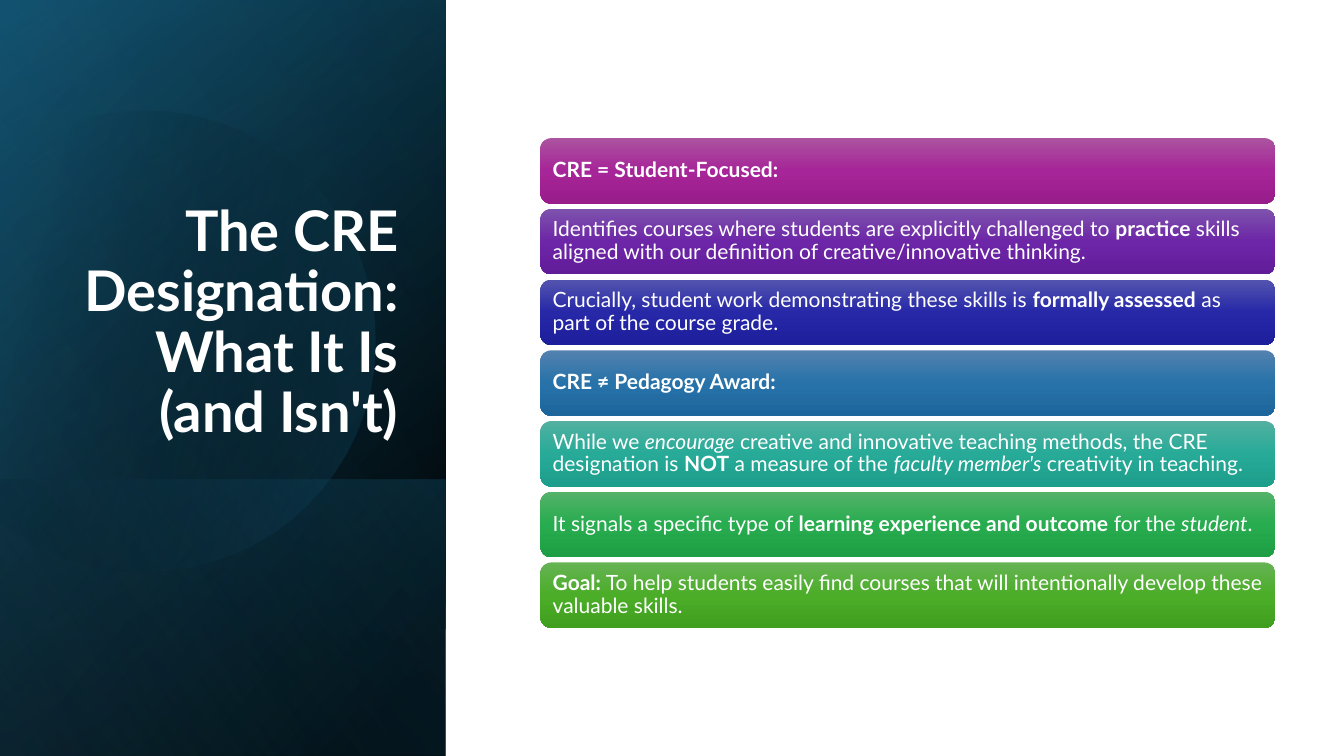
from dataclasses import dataclass
from math import cos, radians, sin

from lxml import etree
from pptx import Presentation
from pptx.dml.color import RGBColor
from pptx.enum.shapes import MSO_SHAPE
from pptx.enum.text import MSO_ANCHOR, PP_ALIGN
from pptx.oxml.ns import qn
from pptx.util import Inches, Pt

RECT, ROUND = MSO_SHAPE.RECTANGLE, MSO_SHAPE.ROUNDED_RECTANGLE
LEFT, RIGHT = PP_ALIGN.LEFT, PP_ALIGN.RIGHT
MIDDLE, BOTTOM = MSO_ANCHOR.MIDDLE, MSO_ANCHOR.BOTTOM
BOLD, ITALIC = {"bold": True}, {"italic": True}


@dataclass(frozen=True)
class Theme:
    font: str = "Lato"
    title: int = 40
    body: int = 15
    white: str = "FFFFFF"
    black: str = "000000"
    navy: str = "104862"
    teal: str = "156082"
    sky: str = "46B1E1"
    bars: tuple = (
        ("AC53A0", "A62598", "991C8B"),
        ("7E53AD", "6D26A7", "611C9A"),
        ("5354AE", "2628A8", "1D1E9B"),
        ("5382AF", "2772A9", "1D669C"),
        ("53B0A1", "27AB98", "1D9D8B"),
        ("54B269", "27AC4F", "1E9E44"),
        ("66B354", "4BAD28", "409F1E"),
    )


THEME = Theme()

TITLE = [("The CRE Designation: What It Is (and Isn't)", BOLD)]
ROWS = [
    [("CRE = Student-Focused:", BOLD)],
    [("Identifies courses where students are explicitly challenged to ", {}),
     ("practice", BOLD),
     (" skills aligned with our definition of creative/innovative thinking.", {})],
    [("Crucially, student work demonstrating these skills is ", {}),
     ("formally assessed", BOLD),
     (" as part of the course grade.", {})],
    [("CRE ≠ Pedagogy Award:", BOLD)],
    [("While we ", {}),
     ("encourage", ITALIC),
     (" creative and innovative teaching methods, the CRE designation is ", {}),
     ("NOT", BOLD),
     (" a measure of the ", {}),
     ("faculty member's", ITALIC),
     (" creativity in teaching.", {})],
    [("It signals a specific type of ", {}),
     ("learning experience and outcome", BOLD),
     (" for the ", {}),
     ("student", ITALIC),
     (".", {})],
    [("Goal:", BOLD),
     (" To help students easily find courses that will intentionally develop"
      " these valuable skills.", {})],
]

# Outline of the clipped disc: start point, then cubic (6) or line (2) segments
START = (1.49, 1.1)
DISC = [
    (2.46, 1.12, 3.35, 1.77, 3.63, 2.75),
    (3.98, 3.97, 3.28, 5.23, 2.07, 5.58),
    (1.31, 5.8, 0.53, 5.61, -0.03, 5.14),
    (-0.15, 5.03),
    (-0.15, 1.75),
    (0, 1.61),
    (0.23, 1.42, 0.5, 1.28, 0.8, 1.19),
    (1.03, 1.13, 1.26, 1.1, 1.49, 1.1),
]
HUB, TILT = (1.58, 3.34), -16.1


def trace(start, parts, steps=16):
    """Flatten line and cubic segments into a list of points."""
    dots = [start]
    for part in parts:
        if len(part) == 2:
            dots.append(part)
            continue
        ends = [dots[-1], part[:2], part[2:4], part[4:]]
        for step in range(1, steps + 1):
            t = step / steps
            u = 1 - t
            mix = (u ** 3, 3 * u * u * t, 3 * u * t * t, t ** 3)
            dots.append(tuple(sum(m * e[axis] for m, e in zip(mix, ends))
                              for axis in (0, 1)))
    return dots


def turn(dot, hub, angle):
    """Rotate a point clockwise about a hub, in degrees."""
    a, x, y = radians(angle), dot[0] - hub[0], dot[1] - hub[1]
    return hub[0] + x * cos(a) - y * sin(a), hub[1] + x * sin(a) + y * cos(a)


def add_run(para, text, size, color, bold=False, italic=False):
    run = para.add_run()
    run.text = text
    font = run.font
    font.name, font.size = THEME.font, Pt(size)
    font.bold, font.italic = bold, italic
    font.color.rgb = RGBColor.from_string(color)


class Deck:
    def __init__(self, theme):
        self.theme = theme
        self.show = Presentation()
        self.show.slide_width = Inches(13.33)
        self.show.slide_height = Inches(7.5)
        self.slide = self.show.slides.add_slide(self.show.slide_layouts[6])

    def paint(self, shape, stops, angle):
        """Fill with (position, colour[, opacity]) stops, all in percent."""
        shape.shadow.inherit = False
        shape.line.fill.background()
        shape.fill.gradient()
        grad = shape._element.spPr.find(qn("a:gradFill"))
        for child in list(grad):
            grad.remove(child)
        group = etree.SubElement(grad, qn("a:gsLst"))
        for pos, color, *alpha in stops:
            stop = etree.SubElement(group, qn("a:gs"), pos=str(pos * 1000))
            tint = etree.SubElement(stop, qn("a:srgbClr"), val=color)
            for level in alpha:
                etree.SubElement(tint, qn("a:alpha"), val=str(level * 1000))
        etree.SubElement(grad, qn("a:lin"), ang=str(angle * 60000), scaled="0")

    def panel(self, box, stops, angle):
        """Add a mirrored rectangle turned a quarter; box is before the turn."""
        shape = self.slide.shapes.add_shape(RECT, *map(Inches, box))
        shape.rotation = 90
        shape._element.spPr.xfrm.set("flipH", "1")
        self.paint(shape, stops, angle)

    def disc(self, stops, angle):
        dots = [tuple(map(Inches, turn(dot, HUB, -TILT)))
                for dot in trace(START, DISC)]
        pen = self.slide.shapes.build_freeform(*dots[0])
        pen.add_line_segments(dots[1:], close=True)
        shape = pen.convert_to_shape()
        shape.rotation = TILT
        self.paint(shape, stops, angle)

    def label(self, shape, runs, size, align, anchor, pad):
        frame = shape.text_frame
        frame.word_wrap = True
        frame.vertical_anchor = anchor
        frame.margin_left = frame.margin_right = Inches(pad)
        para = frame.paragraphs[0]
        para.alignment, para.line_spacing = align, 0.9
        for text, style in runs:
            add_run(para, text, size, self.theme.white, **style)

    def title(self, box, runs):
        shape = self.slide.shapes.add_textbox(*map(Inches, box))
        self.label(shape, runs, self.theme.title, RIGHT, BOTTOM, 0.1)

    def bar(self, box, runs, colors):
        shape = self.slide.shapes.add_shape(ROUND, *map(Inches, box))
        self.paint(shape, list(zip((0, 50, 100), colors)), 90)
        self.label(shape, runs, self.theme.body, LEFT, MIDDLE, 0.09)


def main():
    deck, t = Deck(THEME), THEME
    full = (-1.54, 1.54, 7.5, 4.42)
    deck.panel(full, [(8, t.black), (100, t.navy)], 50)
    deck.panel(full, [(0, t.black, 0), (99, t.teal, 46)], 30)
    deck.panel((0.84, 3.92, 2.74, 4.42),
               [(2, t.teal, 29), (100, t.black, 30)], 130)
    deck.disc([(29, t.black, 0), (100, t.teal, 43)], 30)
    deck.panel(full, [(0, t.black, 0), (99, t.sky, 11)], 120)
    deck.title((0.64, 1.84, 3.41, 2.62), TITLE)

    first, last = 1.37, 5.58
    pitch = (last - first) / (len(ROWS) - 1)
    for i, (runs, colors) in enumerate(zip(ROWS, t.bars)):
        deck.bar((5.36, first + i * pitch, 7.29, 0.65), runs, colors)
    deck.show.save("out.pptx")


if __name__ == "__main__":
    main()
